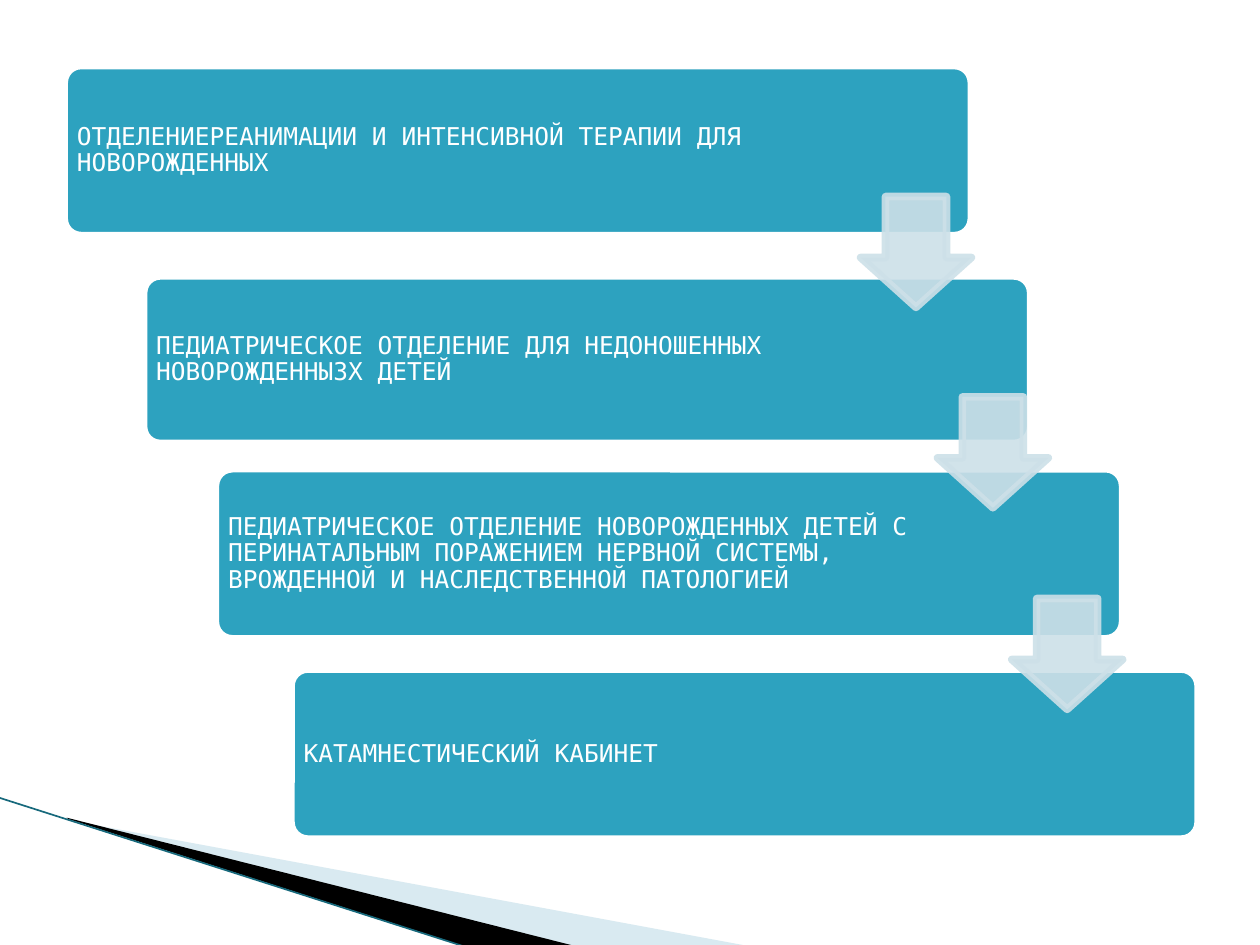
from dataclasses import dataclass

from lxml import etree
from pptx import Presentation
from pptx import util as u
from pptx.dml.color import RGBColor
from pptx.enum import shapes, text
from pptx.oxml.ns import qn


@dataclass(frozen=True)
class Theme:
    step: str = "2DA2BF"
    white: str = "FFFFFF"
    arrow: str = "CDE0E8"
    pale: str = "A0CBDC"
    dark: str = "000000"
    edge: str = "17697C"
    font: str = "DejaVu Sans Mono"
    size: float = 14
    border: float = 4.33
    hairline: float = 0.95


THEME = Theme()

# box of each step, width of its text, wording
STEPS = [
    ((0.51, 0.52, 7.2, 1.35), 5.63,
     "ОТДЕЛЕНИЕРЕАНИМАЦИИ И ИНТЕНСИВНОЙ ТЕРАПИИ ДЛЯ НОВОРОЖДЕННЫХ"),
    ((1.14, 2.19, 7.04, 1.33), 5.52,
     "ПЕДИАТРИЧЕСКОЕ ОТДЕЛЕНИЕ ДЛЯ НЕДОНОШЕННЫХ НОВОРОЖДЕННЫЗХ ДЕТЕЙ"),
    ((1.71, 3.72, 7.2, 1.35), 5.65,
     "ПЕДИАТРИЧЕСКОЕ ОТДЕЛЕНИЕ НОВОРОЖДЕННЫХ ДЕТЕЙ С ПЕРИНАТАЛЬНЫМ "
     "ПОРАЖЕНИЕМ НЕРВНОЙ СИСТЕМЫ, ВРОЖДЕННОЙ И НАСЛЕДСТВЕННОЙ ПАТОЛОГИЕЙ"),
    ((2.31, 5.31, 7.2, 1.35), 5.64, "КАТАМНЕСТИЧЕСКИЙ КАБИНЕТ"),
]
ARROWS = [(6.83, 1.56), (7.44, 3.15), (8.03, 4.75)]
ARROW_SIZE = 0.88
TEXT_GAP = 0.04


def inches(*values):
    return [u.Inches(v) for v in values]


def paint(fill, color, alpha=100):
    """Solid fill with an opacity in percent."""
    fill.solid()
    fill.fore_color.rgb = RGBColor.from_string(color)
    if alpha < 100:
        clr = next(fill._xPr.iter(qn("a:srgbClr")))
        etree.SubElement(clr, qn("a:alpha"), val=str(alpha * 1000))


def add_preset(parent, kind, box, adjustments, fill, line, alpha=100):
    sp = parent.shapes.add_shape(kind, *inches(*box))
    sp.shadow.inherit = False
    for i, value in enumerate(adjustments):
        sp.adjustments[i] = value
    paint(sp.fill, fill, alpha)
    paint(sp.line.fill, line, alpha)
    sp.line.width = u.Pt(THEME.border)
    return sp


def add_step(group, box, text_width, wording):
    left, top, _, height = box
    add_preset(group, shapes.MSO_SHAPE.ROUNDED_RECTANGLE, box, [0.1],
               THEME.step, THEME.white)
    tb = group.shapes.add_textbox(*inches(
        left + TEXT_GAP, top + TEXT_GAP, text_width, height - 2 * TEXT_GAP))
    tf = tb.text_frame
    inset = u.Inches(0.06)
    frame = {"word_wrap": True, "vertical_anchor": text.MSO_ANCHOR.MIDDLE,
             "margin_left": inset, "margin_right": inset,
             "margin_top": inset, "margin_bottom": inset}
    for name, value in frame.items():
        setattr(tf, name, value)
    p = tf.paragraphs[0]
    p.line_spacing = 0.9
    r = p.add_run()
    r.text = wording
    for name, value in {"name": THEME.font, "size": u.Pt(THEME.size)}.items():
        setattr(r.font, name, value)
    r.font.color.rgb = RGBColor.from_string(THEME.white)


def add_staircase(slide):
    group = slide.shapes.add_group_shape()
    for step in STEPS:
        add_step(group, *step)
    for left, top in ARROWS:
        add_preset(group, shapes.MSO_SHAPE.DOWN_ARROW,
                   (left, top, ARROW_SIZE, ARROW_SIZE), [0.55, 0.45],
                   THEME.arrow, THEME.arrow, 90)


def add_wedge(slide, points, color, alpha=100):
    start, *rest = [inches(*pt) for pt in points]
    builder = slide.shapes.build_freeform(*start)
    builder.add_line_segments(rest, close=True)
    sp = builder.convert_to_shape()
    sp.shadow.inherit = False
    paint(sp.fill, color, alpha)
    sp.line.fill.background()


def add_corner(slide):
    """Wedges and hairline in the bottom left corner."""
    add_wedge(slide, [(0.55, 6.51), (5.95, 7.51), (4.56, 7.51), (0.55, 6.5)],
              THEME.pale, 40)
    add_wedge(slide, [(0.53, 6.49), (4.57, 7.51), (3.72, 7.52), (0.54, 6.5)],
              THEME.dark)
    line = slide.shapes.add_connector(
        shapes.MSO_CONNECTOR.STRAIGHT, *inches(-0.01, 6.33, 3.71, 7.52))
    paint(line.line.fill, THEME.edge)
    line.line.width = u.Pt(THEME.hairline)
    etree.SubElement(line._element.spPr, qn("a:effectLst"))


def main():
    prs = Presentation()
    prs.slide_width, prs.slide_height = inches(10, 7.5)
    slide = prs.slides.add_slide(prs.slide_layouts[6])
    add_corner(slide)
    add_staircase(slide)
    prs.save("out.pptx")


if __name__ == "__main__":
    main()
